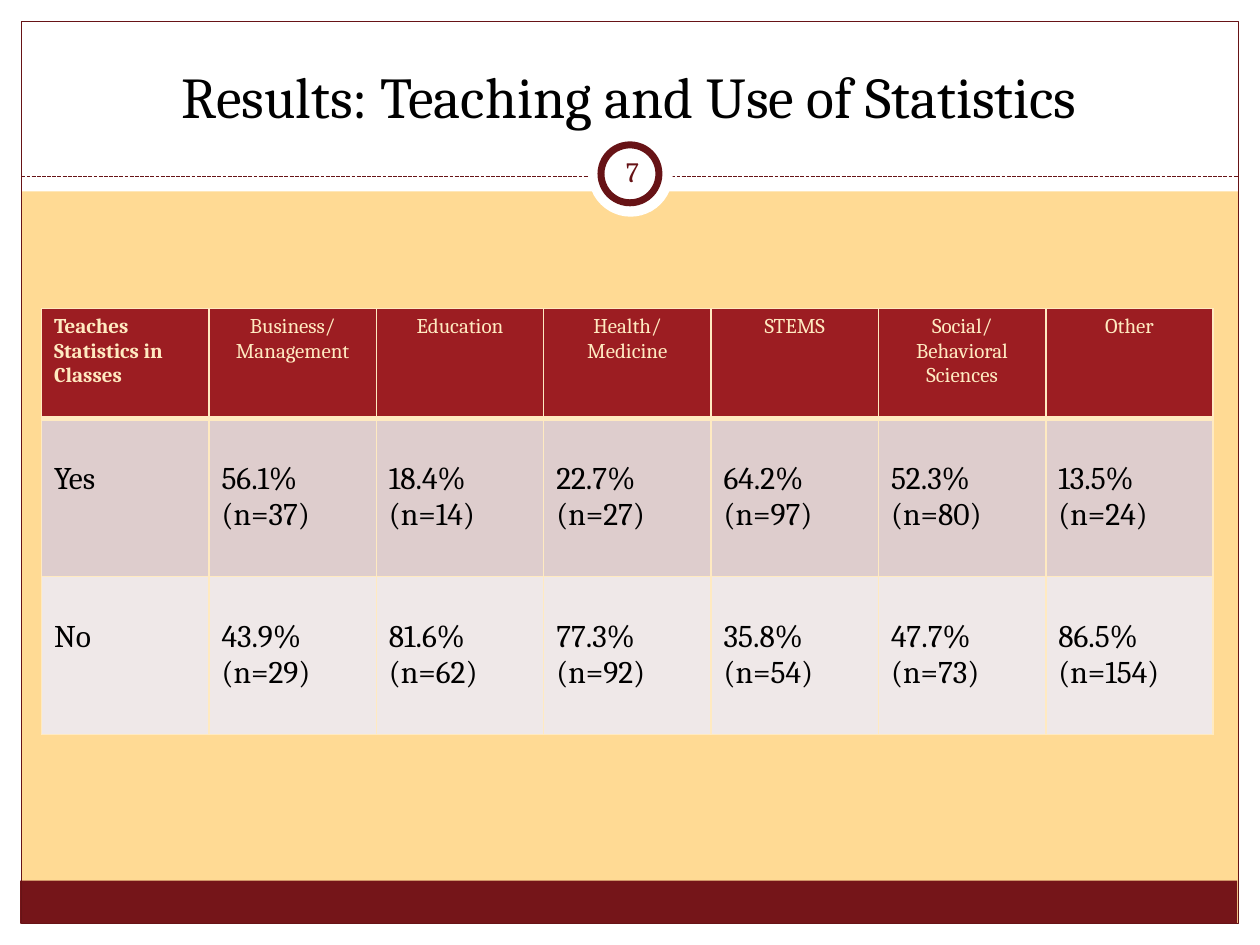
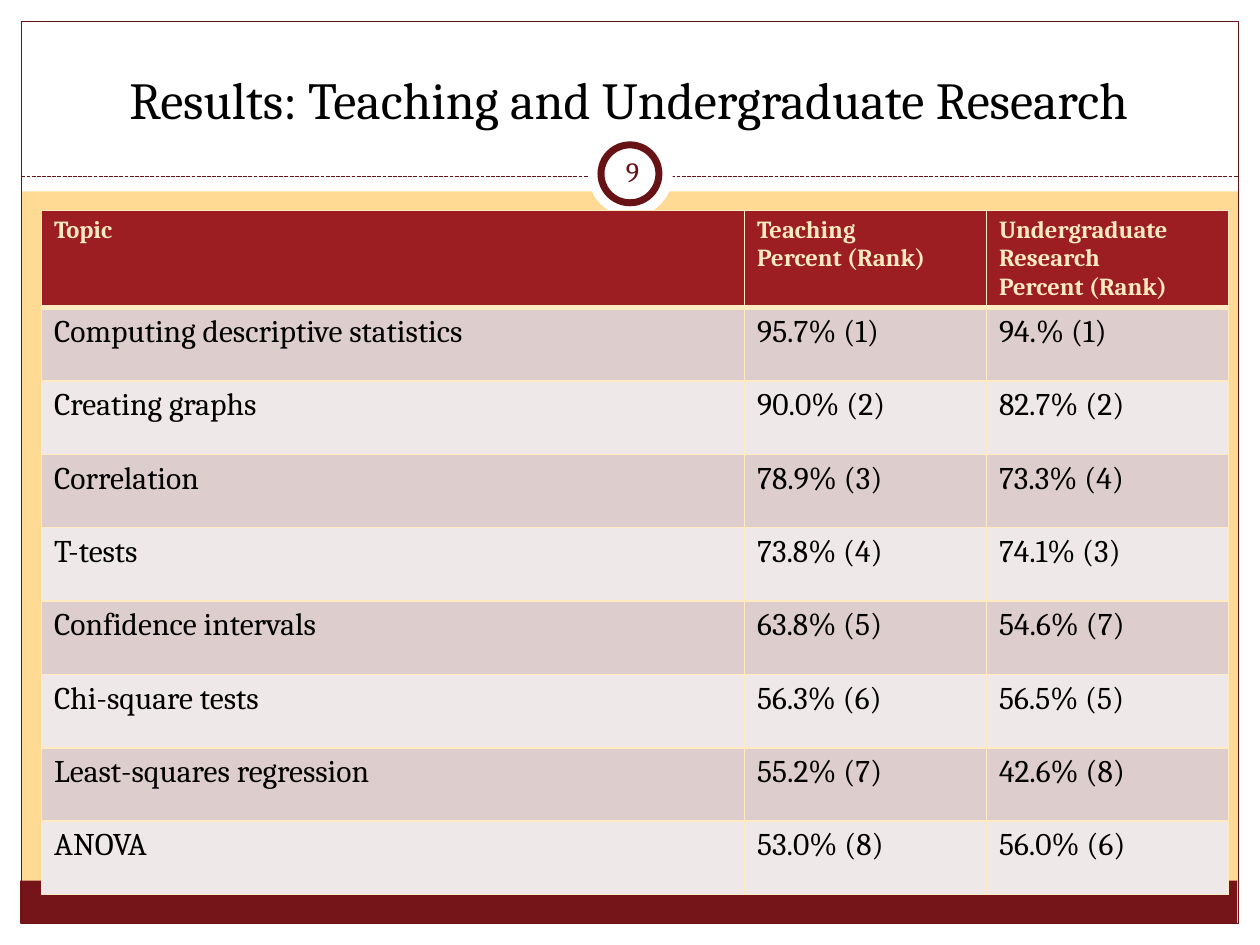
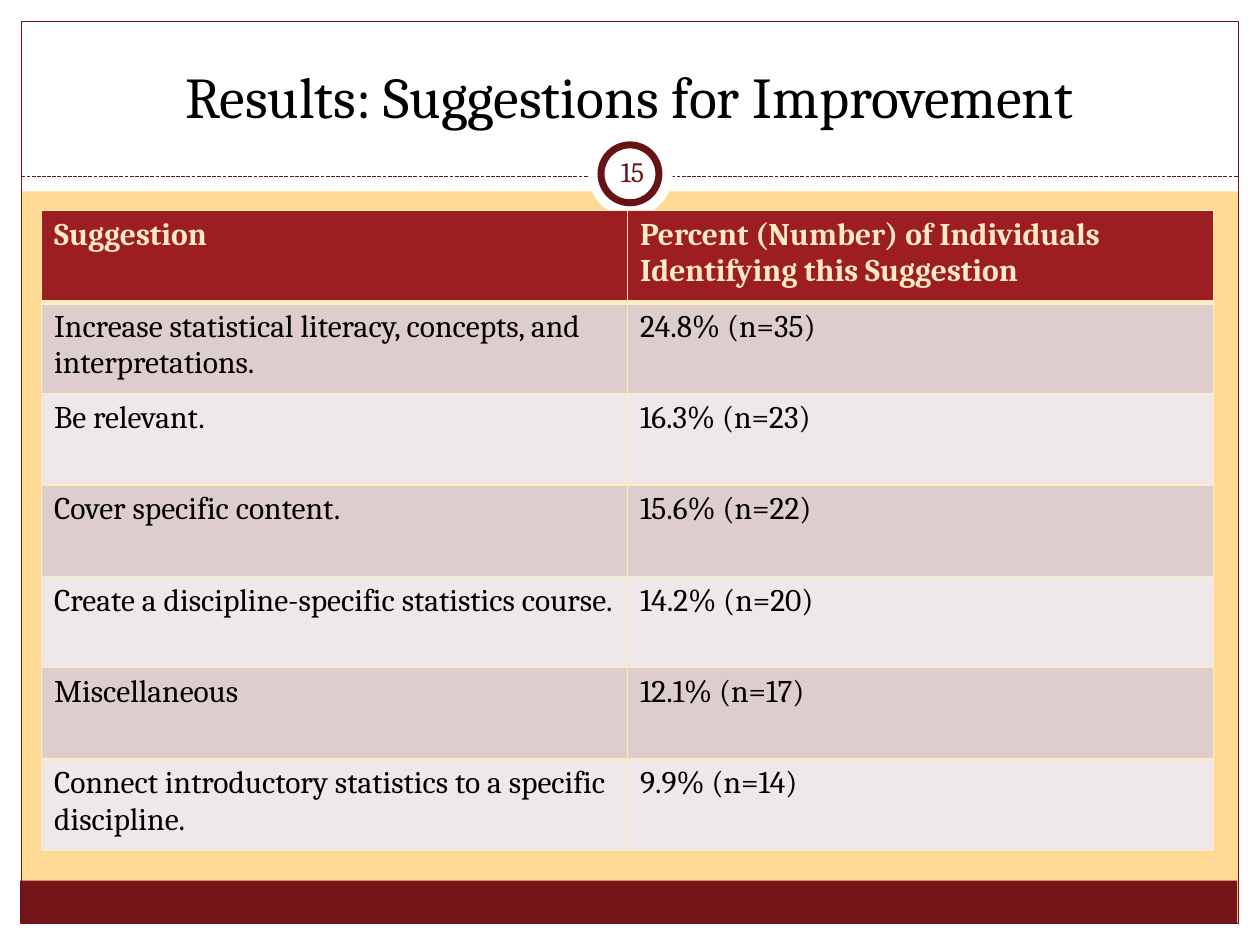
from lxml import etree
from pptx import Presentation
from pptx.dml.color import RGBColor
from pptx.enum.dml import MSO_LINE
from pptx.enum.shapes import MSO_CONNECTOR, MSO_SHAPE
from pptx.enum.text import MSO_ANCHOR, MSO_AUTO_SIZE, PP_ALIGN
from pptx.oxml.ns import qn
from pptx.util import Inches, Pt

RECT, OVAL = MSO_SHAPE.RECTANGLE, MSO_SHAPE.OVAL
STRAIGHT, DASH = MSO_CONNECTOR.STRAIGHT, MSO_LINE.SQUARE_DOT
LEFT, CENTER = PP_ALIGN.LEFT, PP_ALIGN.CENTER
MIDDLE, BOTTOM = MSO_ANCHOR.MIDDLE, MSO_ANCHOR.BOTTOM
NO_AUTOFIT = MSO_AUTO_SIZE.NONE

FONT = "Cambria"
SAND = RGBColor(0xFF, 0xDA, 0x94)
CREAM = RGBColor(0xFF, 0xEA, 0xC1)
WHITE = RGBColor(0xFF, 0xFF, 0xFF)
BLACK = RGBColor(0, 0, 0)
MAROON = RGBColor(0x67, 0x13, 0x16)
FOOTER_RED = RGBColor(0x75, 0x15, 0x19)
HEADER_RED = RGBColor(0x9C, 0x1D, 0x22)
BANDS = (RGBColor(0xDE, 0xCD, 0xCD), RGBColor(0xEF, 0xE8, 0xE8))

TITLE_ONLY = 5
TITLE_BOX = (0.33, 0.25, 9.33, 0.83)
NUMBER_BOX = (4.77, 1.12, 0.5, 0.48)

USE_ROWS = [
    ["Teaches Statistics in Classes", "Business/\nManagement", "Education",
     "Health/\nMedicine", "STEMS", "Social/\nBehavioral Sciences", "Other"],
    ["Yes", "56.1% (n=37)", "18.4%\n(n=14)", "22.7%\n(n=27)",
     "64.2%\n(n=97)", "52.3%\n(n=80)", "13.5%\n(n=24)"],
    ["No", "43.9%\n(n=29)", "81.6%\n(n=62)", "77.3%\n(n=92)",
     "35.8%\n(n=54)", "47.7%\n(n=73)", "86.5%\n(n=154)"],
]
TOPIC_ROWS = [
    ["Topic", "Teaching\nPercent (Rank)", "Undergraduate\nResearch\nPercent (Rank)"],
    ["Computing descriptive statistics", "95.7% (1)", "94.% (1)"],
    ["Creating graphs", "90.0% (2)", "82.7% (2)"],
    ["Correlation", "78.9% (3)", "73.3% (4)"],
    ["T-tests", "73.8% (4)", "74.1% (3)"],
    ["Confidence intervals", "63.8% (5)", "54.6% (7)"],
    ["Chi-square tests", "56.3% (6)", "56.5% (5)"],
    ["Least-squares regression", "55.2% (7)", "42.6% (8)"],
    ["ANOVA", "53.0% (8)", "56.0% (6)"],
]
SUGGESTION_ROWS = [
    ["Suggestion", "Percent (Number) of Individuals Identifying this Suggestion"],
    ["Increase statistical literacy, concepts, and interpretations.", "24.8% (n=35)"],
    ["Be relevant.", "16.3% (n=23)"],
    ["Cover specific content.", "15.6% (n=22)"],
    ["Create a discipline-specific statistics course.", "14.2% (n=20)"],
    ["Miscellaneous", "12.1% (n=17)"],
    ["Connect introductory statistics to a specific discipline.", "9.9% (n=14)"],
]


def inches(box):
    """Convert a box of numbers to lengths."""
    return [Inches(v) for v in box]


def set_attrs(obj, values):
    """Set each attribute named in a dict."""
    for name, value in values.items():
        setattr(obj, name, value)


def format_text(tf, size, color, align, bold=False):
    """Give every paragraph of a text frame one format."""
    for p in tf.paragraphs:
        p.alignment = align
        for r in p.runs:
            set_attrs(r.font, {"name": FONT, "size": Pt(size), "bold": bold})
            r.font.color.rgb = color


def add_plain_shape(s, kind, box, fill=None, line=None, width=0.75):
    """Add a flat shape with an optional fill and outline."""
    sp = s.shapes.add_shape(kind, *inches(box))
    sp.shadow.inherit = False
    if fill is None:
        sp.fill.background()
    else:
        sp.fill.solid()
        sp.fill.fore_color.rgb = fill
    if line is None:
        sp.line.fill.background()
    else:
        sp.line.color.rgb = line
        sp.line.width = Pt(width)
    return sp


def add_frame(s):
    """Draw the margins, footer band, border, rule and number ring."""
    margins = [(0, 7.33, 10, 0.17), (0, 0, 10, 1.52),
               (0, 0, 0.17, 7.5), (9.83, 0, 0.17, 7.5)]
    parts = [add_plain_shape(s, RECT, box, WHITE) for box in margins]
    parts.append(add_plain_shape(s, RECT, (0.16, 6.99, 9.66, 0.34), FOOTER_RED))
    parts.append(add_plain_shape(s, RECT, (0.17, 0.17, 9.66, 7.16), line=MAROON))
    rule = s.shapes.add_connector(STRAIGHT, *inches((0.17, 1.4, 9.83, 1.4)))
    set_attrs(rule.line, {"width": Pt(0.75), "dash_style": DASH})
    rule.line.color.rgb = MAROON
    etree.SubElement(rule._element.spPr, qn("a:effectLst"))
    parts.append(rule)
    parts.append(add_plain_shape(s, OVAL, (4.67, 1.05, 0.67, 0.67), WHITE))
    parts.append(add_plain_shape(s, OVAL, (4.77, 1.15, 0.46, 0.46), WHITE, MAROON, 4))
    return parts


def set_up_layout(prs, layout, s):
    """Put the background, frame and title place on the shared layout."""
    prs.slide_master.background.fill.solid()
    prs.slide_master.background.fill.fore_color.rgb = SAND
    for part in add_frame(s):
        layout.shapes._spTree.append(part._element)
    title = layout.placeholders[0]
    set_attrs(title, dict(zip(("left", "top", "width", "height"), inches(TITLE_BOX))))


def add_heading(s, title, size, number):
    """Fill the title and write the number inside the ring."""
    tf = s.shapes.title.text_frame
    tf.text = title
    set_attrs(tf, {"vertical_anchor": BOTTOM, "word_wrap": True, "auto_size": NO_AUTOFIT})
    format_text(tf, size, BLACK, CENTER)
    tf = s.shapes.add_textbox(*inches(NUMBER_BOX)).text_frame
    tf.text = number
    set_attrs(tf, {"vertical_anchor": MIDDLE, "word_wrap": True})
    set_attrs(tf, {f"margin_{side}": Inches(0.05)
                   for side in ("left", "top", "right", "bottom")})
    format_text(tf, 16, MAROON, CENTER)


def set_borders(cell, top, bottom):
    """Draw the four cream borders of a cell."""
    tc_pr = cell._tc.get_or_add_tcPr()
    for tag, width in (("lnL", 1), ("lnR", 1), ("lnT", top), ("lnB", bottom)):
        ln = etree.SubElement(tc_pr, qn(f"a:{tag}"), w=str(Pt(width)))
        fill = etree.SubElement(ln, qn("a:solidFill"))
        etree.SubElement(fill, qn("a:srgbClr"), val=str(CREAM))


def add_results_table(s, box, rows, col_widths, header_height, header_size,
                      body_top=0.05, centered_header=False):
    """Add a banded table whose body rows share the height left by the header."""
    table = s.shapes.add_table(len(rows), len(col_widths), *inches(box)).table
    for col, width in zip(table.columns, col_widths):
        col.width = Inches(width)
    body_height = (box[3] - header_height) / (len(rows) - 1)
    for i, row in enumerate(rows):
        table.rows[i].height = Inches(body_height if i else header_height)
        for j, text in enumerate(row):
            cell = table.cell(i, j)
            cell.text = text
            set_borders(cell, 3 if i == 1 else 1, 1 if i else 3)
            cell.fill.solid()
            cell.fill.fore_color.rgb = BANDS[(i - 1) % 2] if i else HEADER_RED
            if i:
                cell.margin_top = Inches(body_top)
                format_text(cell.text_frame, 18, BLACK, LEFT)
            else:
                centered = centered_header and j > 0
                format_text(cell.text_frame, header_size, CREAM,
                            CENTER if centered else LEFT, not centered)


def main():
    """Build the three results slides."""
    prs = Presentation()
    prs.slide_width, prs.slide_height = Inches(10), Inches(7.5)
    layout = prs.slide_layouts[TITLE_ONLY]
    slides = [prs.slides.add_slide(layout) for _ in range(3)]
    set_up_layout(prs, layout, slides[0])
    use, topics, suggestions = slides

    add_results_table(use, (0.33, 2.45, 9.3, 3.38), USE_ROWS, [9.3 / 7] * 7,
                      0.87, 12, body_top=0.34, centered_header=True)
    add_heading(use, "Results: Teaching and Use of Statistics", 33, "7")

    add_results_table(topics, (0.33, 1.67, 9.42, 5.43), TOPIC_ROWS,
                      [5.58, 1.92, 1.92], 0.77, 14)
    add_heading(topics, "Results: Teaching and Undergraduate Research", 29.7, "9")

    add_results_table(suggestions, (0.33, 1.67, 9.3, 5.08), SUGGESTION_ROWS,
                      [4.65] * 2, 0.73, 18)
    add_heading(suggestions, "Results: Suggestions for Improvement", 33, "15")
    prs.save("out.pptx")


if __name__ == "__main__":
    main()
